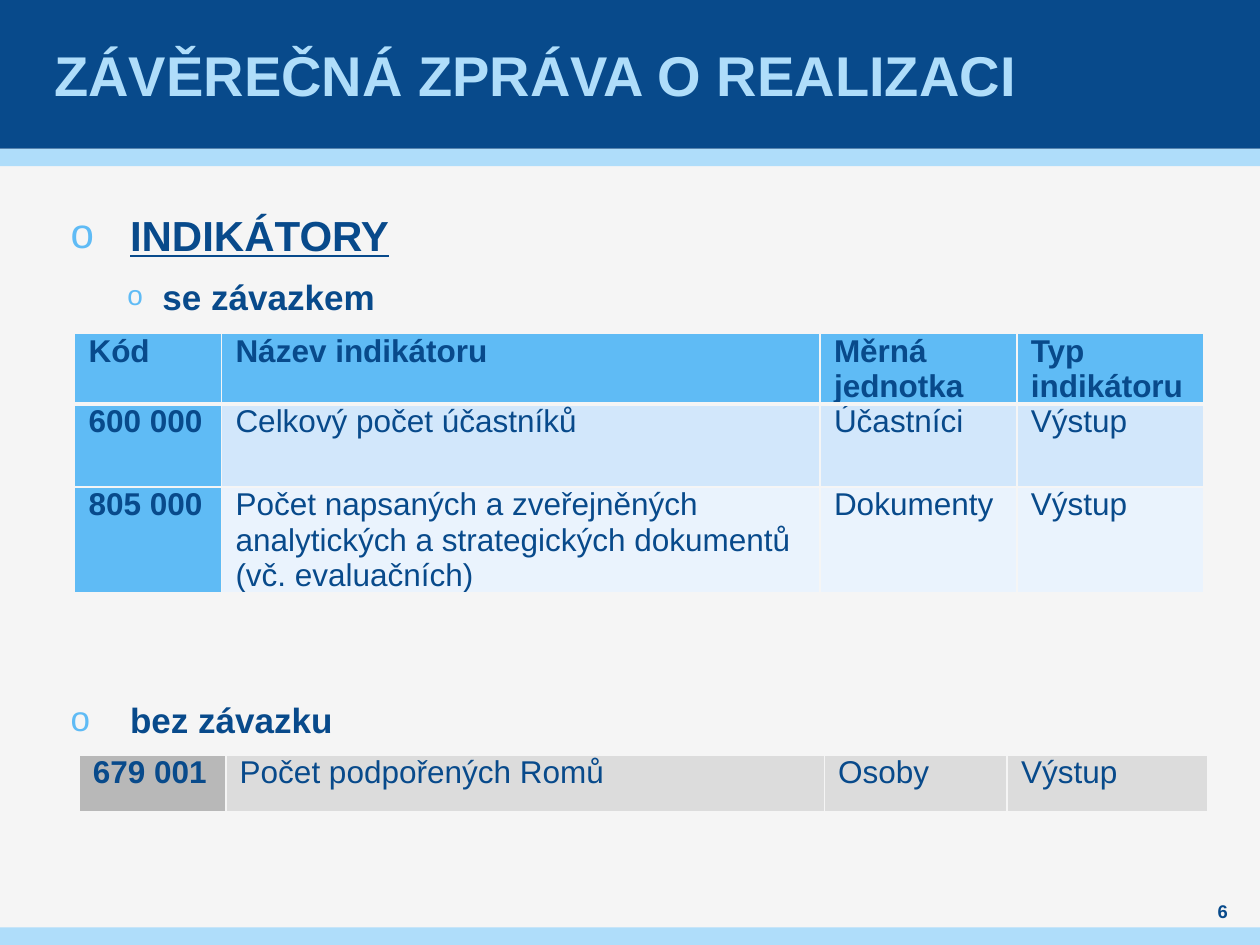
from lxml.etree import SubElement
from pptx import Presentation
from pptx.dml.color import RGBColor
from pptx.enum.shapes import MSO_SHAPE
from pptx.enum.text import MSO_ANCHOR, MSO_AUTO_SIZE, PP_ALIGN
from pptx.oxml.ns import qn
from pptx.util import Pt

NAVY, SKY, PALE = "084A8B", "5FBBF5", "AFDDFA"
PAPER = "F5F5F5"
WIDTH, HEIGHT = 720, 540
HEADER_HEIGHT, STRIPE_HEIGHT = 85, 10


def paint(fill, color):
    fill.solid()
    fill.fore_color.rgb = RGBColor.from_string(color)


def write(paragraph, text, size=18, color=NAVY, bold=True, underline=False,
          align=PP_ALIGN.LEFT, before=0, after=0, line=None):
    paragraph.alignment = align
    paragraph.space_before = Pt(before)
    paragraph.space_after = Pt(after)
    if line:
        paragraph.line_spacing = Pt(line)
    run = paragraph.add_run()
    run.text = text
    font = run.font
    font.name, font.size = "Arial", Pt(size)
    font.bold, font.underline = bold, underline
    font.color.rgb = RGBColor.from_string(color)


def indent(paragraph, margin, first_line=0):
    properties = paragraph._p.get_or_add_pPr()
    properties.set("marL", str(Pt(margin)))
    properties.set("indent", str(Pt(first_line)))
    return properties


def add_bullet(paragraph, margin, hanging, percent=100):
    properties = indent(paragraph, margin, -hanging)
    bullet_color = SubElement(properties, qn("a:buClr"))
    SubElement(bullet_color, qn("a:srgbClr"), val=SKY)
    SubElement(properties, qn("a:buSzPct"), val=str(percent * 1000))
    SubElement(properties, qn("a:buFont"), typeface="Arial")
    SubElement(properties, qn("a:buChar"), char="o")


def place(holder, left, top, width, height, anchor, side=0):
    holder.left, holder.top = Pt(left), Pt(top)
    holder.width, holder.height = Pt(width), Pt(height)
    frame = holder.text_frame
    frame.margin_left = frame.margin_right = Pt(side)
    frame.margin_top = frame.margin_bottom = 0
    frame.vertical_anchor = anchor
    frame.word_wrap = True
    frame.auto_size = MSO_AUTO_SIZE.NONE
    return frame


def add_band(slide, top, height, color):
    band = slide.shapes.add_shape(MSO_SHAPE.RECTANGLE, 0, Pt(top), Pt(WIDTH), Pt(height))
    band.shadow.inherit = False
    paint(band.fill, color)
    band.line.fill.background()
    slide.shapes.element.insert(2, band.element)


def add_title(slide):
    frame = place(slide.shapes.title, 28, 0, 663, HEADER_HEIGHT, MSO_ANCHOR.MIDDLE, 3)
    write(frame.paragraphs[0], "ZÁVĚREČNÁ ZPRÁVA O REALIZACI", size=32, color=PALE)


def add_outline(slide):
    frame = place(slide.placeholders[1], 40.3, 119.5, 635, 300, MSO_ANCHOR.TOP)
    indicators = frame.paragraphs[0]
    write(indicators, "INDIKÁTORY", size=24, underline=True, before=6, after=6, line=28.8)
    add_bullet(indicators, 34, 34)
    binding = frame.add_paragraph()
    binding.level = 1
    write(binding, "se závazkem", size=20, before=3, after=3, line=24)
    add_bullet(binding, 52.5, 20, 80)
    optional = frame.add_paragraph()
    write(optional, "bez závazku", size=20, before=210, after=6, line=28.8)
    add_bullet(optional, 34, 34)


def add_page_number(slide):
    number = slide.shapes.add_textbox(0, 0, 0, 0)
    frame = place(number, 680.4, 513.4, 36.7, 14.4, MSO_ANCHOR.MIDDLE)
    write(frame.paragraphs[0], "6", size=10.5, align=PP_ALIGN.CENTER)


def add_borders(cell, bottom):
    properties = cell._tc.get_or_add_tcPr()
    for side, width in (("L", 1), ("R", 1), ("T", 1), ("B", bottom)):
        border = SubElement(properties, qn(f"a:ln{side}"), w=str(Pt(width)))
        border_fill = SubElement(border, qn("a:solidFill"))
        SubElement(border_fill, qn("a:srgbClr"), val=PAPER)


def fill_cell(cell, text, color, bold, bottom):
    cell.margin_left = cell.margin_right = Pt(5)
    cell.margin_top = cell.margin_bottom = 0
    add_borders(cell, bottom)
    paint(cell.fill, color)
    paragraph = cell.text_frame.paragraphs[0]
    write(paragraph, text, bold=bold, before=3, after=3)
    indent(paragraph, 3)


def add_indicators(slide, left, top, widths, heights, rows, code_color, row_colors, header=False):
    table = slide.shapes.add_table(
        len(rows), len(widths), Pt(left), Pt(top), Pt(sum(widths)), Pt(sum(heights))
    ).table
    table.first_row, table.horz_banding = header, False
    for column, width in zip(table.columns, widths):
        column.width = Pt(width)
    for row, height in zip(table.rows, heights):
        row.height = Pt(height)
    for r, (texts, row_color) in enumerate(zip(rows, row_colors)):
        is_header = header and r == 0
        bottom = 3 if is_header or not header else 1
        for c, text in enumerate(texts):
            color = code_color if c == 0 else row_color
            fill_cell(table.cell(r, c), text, color, is_header or c == 0, bottom)


def main():
    presentation = Presentation()
    presentation.slide_width, presentation.slide_height = Pt(WIDTH), Pt(HEIGHT)
    slide = presentation.slides.add_slide(presentation.slide_layouts[1])
    paint(slide.background.fill, PAPER)
    add_band(slide, 0, HEADER_HEIGHT, NAVY)
    add_band(slide, HEADER_HEIGHT, STRIPE_HEIGHT, PALE)
    add_band(slide, HEIGHT - STRIPE_HEIGHT, STRIPE_HEIGHT, PALE)
    add_title(slide)
    add_outline(slide)
    add_page_number(slide)

    binding_rows = [
        ("Kód", "Název indikátoru", "Měrná jednotka", "Typ indikátoru"),
        ("600 000", "Celkový počet účastníků", "Účastníci", "Výstup"),
        ("805 000",
         "Počet napsaných a zveřejněných analytických a strategických dokumentů (vč. evaluačních)",
         "Dokumenty", "Výstup"),
    ]
    add_indicators(slide, 42.6, 190.6, (84, 342, 112.5, 106.5), (40, 47.5, 58.5),
                   binding_rows, SKY, (SKY, "D2E7FB", "EAF3FD"), header=True)
    optional_rows = [("679 001", "Počet podpořených Romů", "Osoby", "Výstup")]
    add_indicators(slide, 45, 431.5, (84, 342, 104.5, 114.5), (33.5,),
                   optional_rows, "B8B8B8", ("DCDCDC",))
    presentation.save("out.pptx")


if __name__ == "__main__":
    main()
